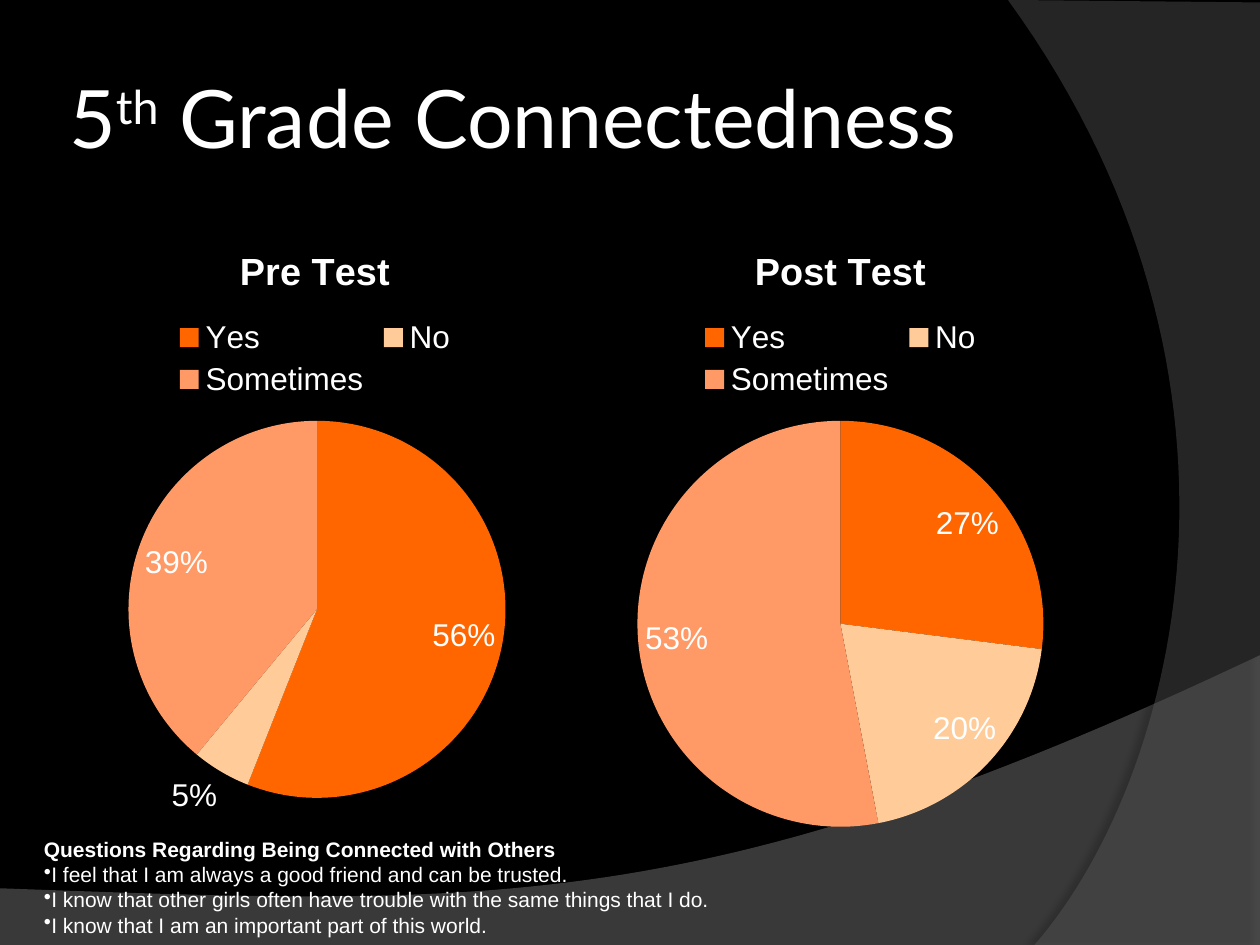
from lxml import etree
from pptx import Presentation
from pptx.chart.data import CategoryChartData
from pptx.dml.color import RGBColor
from pptx.enum.chart import XL_CHART_TYPE, XL_LABEL_POSITION, XL_LEGEND_POSITION
from pptx.enum.text import MSO_ANCHOR
from pptx.oxml.ns import qn
from pptx.util import Inches, Pt

PIE = XL_CHART_TYPE.PIE
TOP = XL_LEGEND_POSITION.TOP
BEST_FIT = XL_LABEL_POSITION.BEST_FIT
MIDDLE = MSO_ANCHOR.MIDDLE

BLACK = RGBColor(0x00, 0x00, 0x00)
WHITE = RGBColor(0xFF, 0xFF, 0xFF)
WAVE_GRAY = RGBColor(0x7F, 0x7F, 0x7F)
ARC_GRAY = RGBColor(0x5E, 0x5E, 0x5E)
SLICE_COLORS = [RGBColor(0xFF, 0x66, 0x00), RGBColor(0xFF, 0xCC, 0x99), RGBColor(0xFF, 0x99, 0x66)]

TITLE = [("5", 0), ("th", 30), (" Grade Connectedness", 0)]  # text, baseline %
ANSWERS = ["Yes", "No", "Sometimes"]
CHARTS = [("Pre Test", 0.5, [56, 5, 39]), ("Post Test", 4.67, [27, 20, 53])]
QUESTIONS_HEADING = "Questions Regarding Being Connected with Others"
QUESTIONS = [
    "I feel that I am always a good friend and can be trusted.",
    "I know that other girls often have trouble with the same things that I do.",
    "I know that I am an important part of this world.",
]


def bezier(p0, p1, p2, p3, steps=60):
    """Points along a cubic curve, both ends included."""
    points = []
    for i in range(steps + 1):
        t = i / steps
        weights = ((1 - t) ** 3, 3 * t * (1 - t) ** 2, 3 * t ** 2 * (1 - t), t ** 3)
        points.append(tuple(sum(w * p[axis] for w, p in zip(weights, (p0, p1, p2, p3)))
                            for axis in (0, 1)))
    return points


def add_alpha(color, percent):
    etree.SubElement(color, qn("a:alpha"), val=str(percent * 1000))


def add_swoosh(s, points, color, opacity, shadow):
    """Translucent outline; shadow is (opacity %, blur pt, distance pt, angle)."""
    vertices = [(Inches(x), Inches(y)) for x, y in points]
    builder = s.shapes.build_freeform(*vertices[0], scale=1.0)
    builder.add_line_segments(vertices[1:], close=True)
    sp = builder.convert_to_shape()
    sp.fill.solid()
    sp.fill.fore_color.rgb = color
    sp.line.fill.background()
    sp.shadow.inherit = False
    props = sp.element.spPr
    add_alpha(props.find(qn("a:solidFill"))[0], opacity)
    shade, blur, distance, angle = shadow
    outer = etree.SubElement(props.find(qn("a:effectLst")), qn("a:outerShdw"),
                             blurRad=str(Pt(blur)), dist=str(Pt(distance)),
                             dir=str(angle * 60000), algn="ctr", rotWithShape="0")
    add_alpha(etree.SubElement(outer, qn("a:srgbClr"), val=str(BLACK)), shade)


def style_font(font, size, name="Arial", bold=False):
    font.size = Pt(size)
    font.name = name
    font.bold = bold
    font.color.rgb = WHITE


def add_run(p, text, size, **style):
    r = p.add_run()
    r.text = text
    style_font(r.font, size, **style)
    return r


def add_pie(s, name, left, values):
    data = CategoryChartData()
    data.categories = ANSWERS
    data.add_series(name, values)
    chart = s.shapes.add_chart(PIE, Inches(left), Inches(1.75), Inches(4), Inches(4.95), data).chart
    style_font(chart.font, 18)
    chart.has_title = True
    add_run(chart.chart_title.text_frame.paragraphs[0], name, 21.6, bold=True)
    chart.chart_title.include_in_layout = False
    chart.has_legend = True
    chart.legend.position = TOP
    chart.legend.include_in_layout = False
    style_font(chart.legend.font, 18)

    plot = chart.plots[0]
    plot.vary_by_categories = True
    for i, color in enumerate(SLICE_COLORS):
        point = plot.series[0].points[i]
        point.format.fill.solid()
        point.format.fill.fore_color.rgb = color
        point.format.line.fill.background()
    plot.has_data_labels = True
    labels = plot.data_labels
    labels.show_percentage = True
    labels.show_value = False
    labels.number_format = "0%"
    labels.number_format_is_linked = False
    labels.position = BEST_FIT
    style_font(labels.font, 18)


def add_text_frame(s, left, top, width, height):
    tf = s.shapes.add_textbox(Inches(left), Inches(top), Inches(width), Inches(height)).text_frame
    tf.word_wrap = True
    return tf


def main():
    prs = Presentation()
    prs.slide_width, prs.slide_height = Inches(10), Inches(7.5)
    s = prs.slides.add_slide(prs.slide_layouts[6])
    s.background.fill.solid()
    s.background.fill.fore_color.rgb = BLACK

    wave = [(0, 7.51), (10, 7.51)] + bezier((10, 5.2), (5.59, 7.29), (3.91, 7.19), (0, 7.05))
    add_swoosh(s, wave, WAVE_GRAY, 45, (35, 4, 3.5, 270))
    arc = [(10, 0.02), (10, 7.5)] + bezier((8.21, 7.5), (9.35, 6.19), (10.18, 3), (8, 0))
    add_swoosh(s, arc, ARC_GRAY, 40, (45, 4, 4, 180))

    tf = add_text_frame(s, 0.5, 0.3, 8.17, 1.25)
    tf.vertical_anchor = MIDDLE
    tf.margin_left = tf.margin_right = tf.margin_top = tf.margin_bottom = Inches(0.05)
    for text, baseline in TITLE:
        r = add_run(tf.paragraphs[0], text, 46, name="Lato")
        if baseline:
            r.font._element.set("baseline", str(baseline * 1000))

    for name, left, values in CHARTS:
        add_pie(s, name, left, values)

    tf = add_text_frame(s, 0.25, 6.59, 9.08, 0.91)
    add_run(tf.paragraphs[0], QUESTIONS_HEADING, 12, bold=True)
    for question in QUESTIONS:
        p = tf.add_paragraph()
        add_run(p, question, 12)
        etree.SubElement(p._p.get_or_add_pPr(), qn("a:buChar"), char="•")

    prs.save("out.pptx")


if __name__ == "__main__":
    main()
